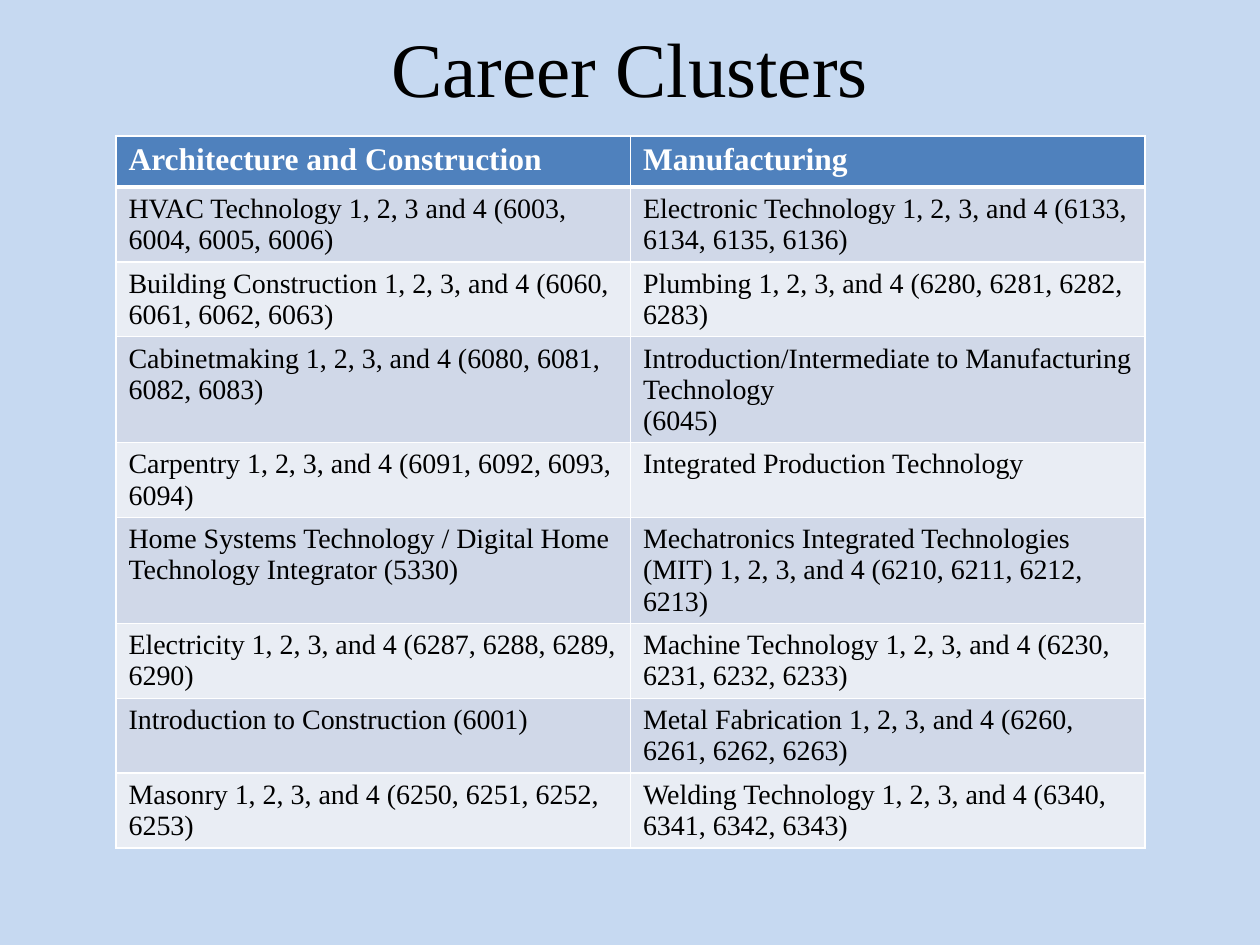
import pptx
import pptx.dml.color
import pptx.enum.text
import pptx.oxml
import pptx.oxml.ns
import pptx.util

EMU_PER_PX = 914400 / 126
FONT = "Times New Roman"
COLORS = {
    "background": "C6D9F1",
    "header": "4F81BD",
    "odd_row": "D0D8E8",
    "even_row": "E9EDF4",
    "border": "FFFFFF",
    "header_text": "FFFFFF",
    "text": "000000",
}
CLUSTERS = ("Architecture and Construction", "Manufacturing")
COURSES = [
    ("HVAC Technology 1, 2, 3 and 4 (6003, 6004, 6005, 6006)",
     "Electronic Technology 1, 2, 3, and 4 (6133, 6134, 6135, 6136)"),
    ("Building Construction 1, 2, 3, and 4 (6060, 6061, 6062, 6063)",
     "Plumbing 1, 2, 3, and 4 (6280, 6281, 6282, 6283)"),
    ("Cabinetmaking 1, 2, 3, and 4 (6080, 6081, 6082, 6083)",
     "Introduction/Intermediate to Manufacturing Technology\n(6045)"),
    ("Carpentry 1, 2, 3, and 4 (6091, 6092, 6093, 6094)",
     "Integrated Production Technology"),
    ("Home Systems Technology / Digital Home Technology Integrator (5330)",
     "Mechatronics Integrated Technologies (MIT) 1, 2, 3, and 4 (6210, 6211, 6212, 6213)"),
    ("Electricity 1, 2, 3, and 4 (6287, 6288, 6289, 6290)",
     "Machine Technology 1, 2, 3, and 4 (6230, 6231, 6232, 6233)"),
    ("Introduction to Construction (6001)",
     "Metal Fabrication 1, 2, 3, and 4 (6260, 6261, 6262, 6263)"),
    ("Masonry 1, 2, 3, and 4 (6250, 6251, 6252, 6253)",
     "Welding Technology 1, 2, 3, and 4 (6340, 6341, 6342, 6343)"),
]


def px(length):
    return pptx.util.Emu(round(length * EMU_PER_PX))


def paint(fill, color):
    fill.solid()
    fill.fore_color.rgb = pptx.dml.color.RGBColor.from_string(COLORS[color])


def write_text(frame, text, size=16, color="text", bold=False,
               align=pptx.enum.text.PP_ALIGN.LEFT):
    """Fill the frame with one paragraph for each line of text."""
    frame.text = text
    for paragraph in frame.paragraphs:
        paragraph.alignment = align
        for run in paragraph.runs:
            run.font.name = FONT
            run.font.size = pptx.util.Pt(size)
            run.font.bold = bold
            paint(run.font.fill, color)


def add_borders(cell, top=1, bottom=1):
    """Draw the four cell borders; widths are in points."""
    properties = cell._tc.get_or_add_tcPr()
    for side, width in (("L", 1), ("R", 1), ("T", top), ("B", bottom)):
        properties.append(pptx.oxml.parse_xml(
            f'<a:ln{side} {pptx.oxml.ns.nsdecls("a")} w="{pptx.util.Pt(width)}">'
            f'<a:solidFill><a:srgbClr val="{COLORS["border"]}"/></a:solidFill>'
            f'</a:ln{side}>'))


def add_title(slide, text):
    title = slide.shapes.title
    title.left, title.top, title.width, title.height = map(px, (63, 21, 1134, 158))
    frame = title.text_frame
    frame.word_wrap = True
    frame.auto_size = pptx.enum.text.MSO_AUTO_SIZE.NONE
    frame.vertical_anchor = pptx.enum.text.MSO_ANCHOR.TOP
    frame.margin_top = frame.margin_bottom = 0
    write_text(frame, text, size=44, align=pptx.enum.text.PP_ALIGN.CENTER)


def add_course_table(slide, clusters, courses):
    rows = [clusters, *courses]
    row_height = 51
    table = slide.shapes.add_table(
        len(rows), len(clusters), px(116), px(136), px(1029),
        px(row_height * len(rows))).table
    for row_number, texts in enumerate(rows):
        is_header = row_number == 0
        band = "header" if is_header else "odd_row" if row_number % 2 else "even_row"
        for column, text in enumerate(texts):
            cell = table.cell(row_number, column)
            add_borders(cell, top=3 if row_number == 1 else 1,
                        bottom=3 if is_header else 1)
            paint(cell.fill, band)
            if is_header:
                write_text(cell.text_frame, text, size=18,
                           color="header_text", bold=True)
            else:
                write_text(cell.text_frame, text)


def main():
    presentation = pptx.Presentation()
    presentation.slide_width = px(1260)
    presentation.slide_height = px(945)
    slide = presentation.slides.add_slide(presentation.slide_layouts[5])
    paint(slide.background.fill, "background")
    add_course_table(slide, CLUSTERS, COURSES)
    add_title(slide, "Career Clusters")
    presentation.save("out.pptx")


if __name__ == "__main__":
    main()
